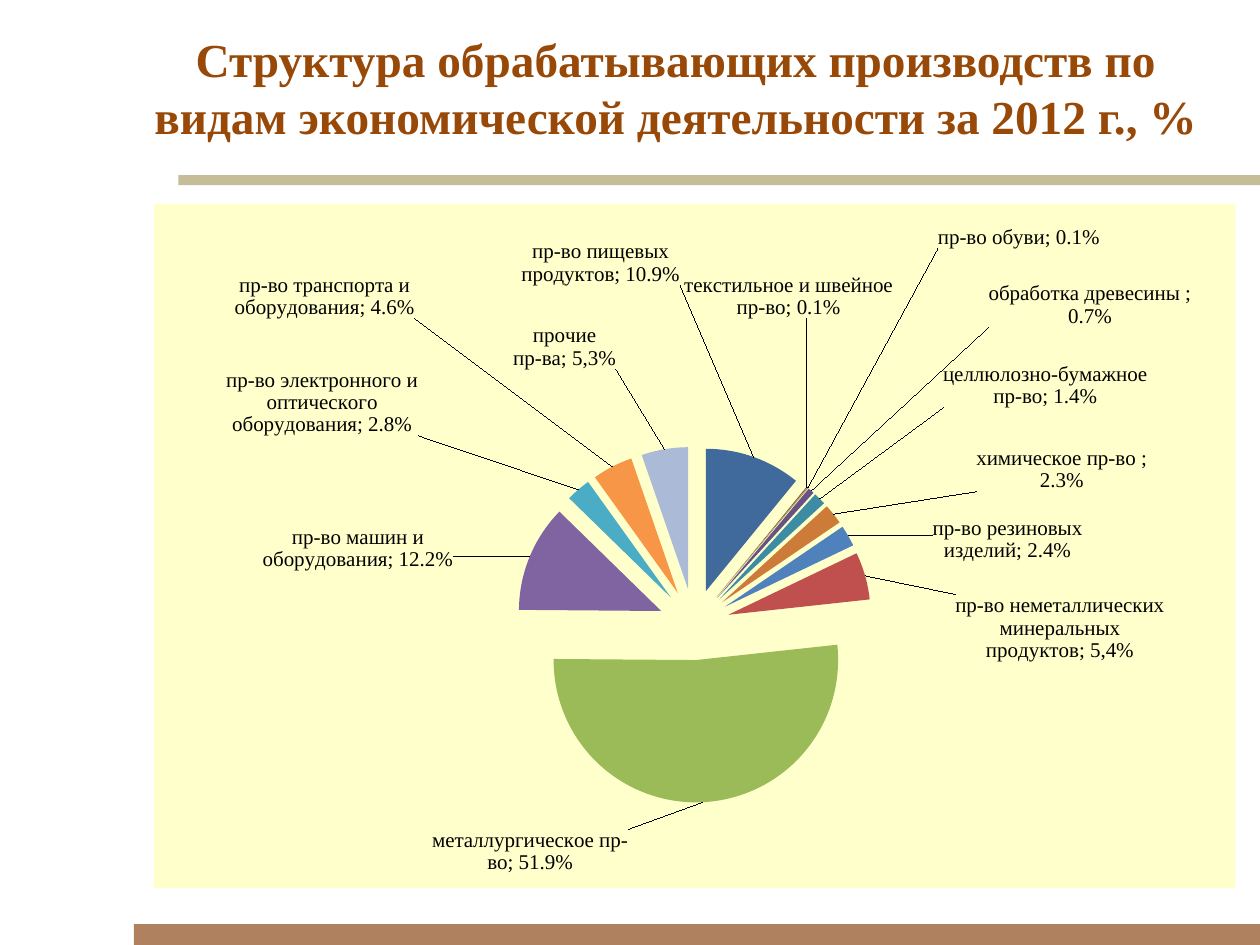
import math

import pptx
import pptx.chart.data
import pptx.dml.color
import pptx.enum.chart
import pptx.enum.shapes
import pptx.enum.text
import pptx.oxml
import pptx.util

Pt = pptx.util.Pt
C = "http://schemas.openxmlformats.org/drawingml/2006/chart"
A = "http://schemas.openxmlformats.org/drawingml/2006/main"

# Chart frame in points; pie area as fractions of the frame
CHART_LEFT, CHART_TOP, CHART_WIDTH, CHART_HEIGHT = 88, 116.5, 618, 391
PIE_AREA = {"x": 0.184, "y": 0.355, "w": 0.631, "h": 0.52}
LABEL_GAP = 4.25

# Category, share, colour, label anchor in points, own label text
SECTORS = [
    ("пр-во пищевых продуктов", 0.109, "406A9B", (298, 163), None),
    ("текстильное и швейное пр-во", 0.001, "9E413E", (391, 182), None),
    ("пр-во обуви", 0.001, "7F9A48", (536, 142), None),
    ("обработка древесины ", 0.007, "695185", (565, 187), None),
    ("целлюлозно-бумажное пр-во", 0.014, "3C8DA3", (539, 233), None),
    ("химическое пр-во ", 0.023, "CC7B38", (558, 281), None),
    ("пр-во резиновых изделий", 0.024, "4F81BD", (533, 321), None),
    ("пр-во неметаллических минеральных продуктов", 0.054, "C0504D", (546, 378),
     "пр-во неметаллических минеральных продуктов; 5,4%"),
    ("металлургическое пр-во", 0.519, "9BBB59", (303, 474), None),
    ("пр-во машин и оборудования", 0.122, "8064A2", (259, 326), None),
    ("пр-во электронного и оптического оборудования", 0.028, "4BACC6", (239, 249), None),
    ("пр-во транспорта и оборудования", 0.046, "F79646", (237, 182), None),
    ("прочие пр-ва", 0.053, "AABAD7", (352, 211), "прочие\nпр-ва; 5,3%"),
]


def color(value):
    return pptx.dml.color.RGBColor.from_string(value)


def chart_xml(tag, content="", attributes=""):
    return pptx.oxml.parse_xml(
        f'<c:{tag} xmlns:c="{C}" xmlns:a="{A}" {attributes}>{content}</c:{tag}>')


def layout_xml(values, prefix=""):
    content = prefix + "".join(f'<c:{key} val="{value:.4f}"/>' for key, value in values.items())
    return chart_xml("layout", f"<c:manualLayout>{content}</c:manualLayout>")


def label_offsets():
    """Label shifts from the rim of each sector, as fractions of the chart."""
    center_x = CHART_LEFT + (PIE_AREA["x"] + PIE_AREA["w"] / 2) * CHART_WIDTH
    center_y = CHART_TOP + (PIE_AREA["y"] + PIE_AREA["h"] / 2) * CHART_HEIGHT
    radius = PIE_AREA["h"] * CHART_HEIGHT / 2 + LABEL_GAP
    total = sum(sector[1] for sector in SECTORS)
    start = 0
    for _, share, _, (x, y), _ in SECTORS:
        angle = 2 * math.pi * (start + share / 2) / total
        start += share
        yield {"x": (x - center_x - radius * math.sin(angle)) / CHART_WIDTH,
               "y": (y - center_y + radius * math.cos(angle)) / CHART_HEIGHT}


class SlideBuilder:
    font_name = "Times New Roman"
    title_color = "984807"
    text_color = "000000"
    chart_fill = "FFFFCC"
    label_size = 12

    def __init__(self, slide):
        self.slide = slide

    def style(self, font, size, font_color, bold=False):
        font.name, font.size, font.bold = self.font_name, Pt(size), bold
        font.color.rgb = color(font_color)

    def bar(self, left, top, width, height, fill):
        shape = self.slide.shapes.add_shape(
            pptx.enum.shapes.MSO_SHAPE.RECTANGLE, Pt(left), Pt(top), Pt(width), Pt(height))
        shape.shadow.inherit = False
        shape.fill.solid()
        shape.fill.fore_color.rgb = color(fill)
        shape.line.fill.background()

    def title(self, text, left, top, width, height):
        shape = self.slide.shapes.title
        shape.left, shape.top, shape.width, shape.height = map(Pt, (left, top, width, height))
        frame = shape.text_frame
        frame.text = text
        frame.word_wrap = True
        frame.auto_size = pptx.enum.text.MSO_AUTO_SIZE.NONE
        frame.vertical_anchor = pptx.enum.text.MSO_ANCHOR.MIDDLE
        paragraph = frame.paragraphs[0]
        paragraph.alignment = pptx.enum.text.PP_ALIGN.CENTER
        self.style(paragraph.runs[0].font, 27, self.title_color, bold=True)

    def pie(self):
        data = pptx.chart.data.CategoryChartData(number_format="0.0%")
        data.categories = [sector[0] for sector in SECTORS]
        data.add_series("Series 1", [sector[1] for sector in SECTORS])
        chart = self.slide.shapes.add_chart(
            pptx.enum.chart.XL_CHART_TYPE.PIE, Pt(CHART_LEFT), Pt(CHART_TOP),
            Pt(CHART_WIDTH), Pt(CHART_HEIGHT), data).chart
        chart.has_legend = chart.has_title = False
        self.style(chart.font, 10, self.text_color)
        series = chart.plots[0].series[0]

        # Labels common to the series
        labels = series.data_labels
        labels.show_category_name = labels.show_value = True
        labels.show_percentage = False
        labels.number_format, labels.number_format_is_linked = "0.0%", False
        self.style(labels.font, self.label_size, self.text_color)

        # Sectors and their labels
        for index, (sector, offset) in enumerate(zip(SECTORS, label_offsets())):
            point = series.points[index]
            point.format.fill.solid()
            point.format.fill.fore_color.rgb = color(sector[2])
            self.sector_label(series, index, sector[4], offset)
        series._element.xpath("c:dPt")[0].addprevious(
            chart_xml("explosion", attributes='val="25"'))

        # Background and pie position
        root = chart.element if hasattr(chart, "element") else chart._chartSpace
        root.xpath("c:chart")[0].addnext(chart_xml(
            "spPr", f'<a:solidFill><a:srgbClr val="{self.chart_fill}"/></a:solidFill>'
                    "<a:ln><a:noFill/></a:ln>"))
        plot_area = root.xpath("c:chart/c:plotArea")[0]
        for layout in plot_area.xpath("c:layout"):
            plot_area.remove(layout)
        plot_area.insert(0, layout_xml(
            PIE_AREA, '<c:layoutTarget val="inner"/><c:xMode val="edge"/><c:yMode val="edge"/>'))

    def sector_label(self, series, index, text, offset):
        label = series.points[index].data_label
        if text:
            label.text_frame.text = text
            for paragraph in label.text_frame.paragraphs:
                self.style(paragraph.runs[0].font, self.label_size, self.text_color)
        else:
            self.style(label.font, self.label_size, self.text_color)
        label.position = pptx.enum.chart.XL_LABEL_POSITION.BEST_FIT
        element = series._element.xpath(f"c:dLbls/c:dLbl[c:idx/@val='{index}']")[0]
        identifier = element.xpath("c:idx")[0]
        if not text:
            identifier.addnext(chart_xml(
                "numFmt", attributes='formatCode="0.0%" sourceLinked="0"'))
        identifier.addnext(layout_xml(offset))
        element.xpath("c:showCatName")[0].set("val", "1")
        element.append(chart_xml("separator", "; "))


def main():
    presentation = pptx.Presentation()
    presentation.slide_width, presentation.slide_height = Pt(720), Pt(540)
    builder = SlideBuilder(presentation.slides.add_slide(presentation.slide_layouts[5]))
    # Decorative bars
    builder.bar(76.5, 528, 643.5, 12, "AF815F")
    builder.bar(102, 100, 618, 5.75, "C4BD97")
    # Title and chart
    builder.title("Структура обрабатывающих производств по видам экономической "
                  "деятельности за 2012 г., %", 65.5, 15, 641, 70)
    builder.pie()
    presentation.save("out.pptx")


if __name__ == "__main__":
    main()
